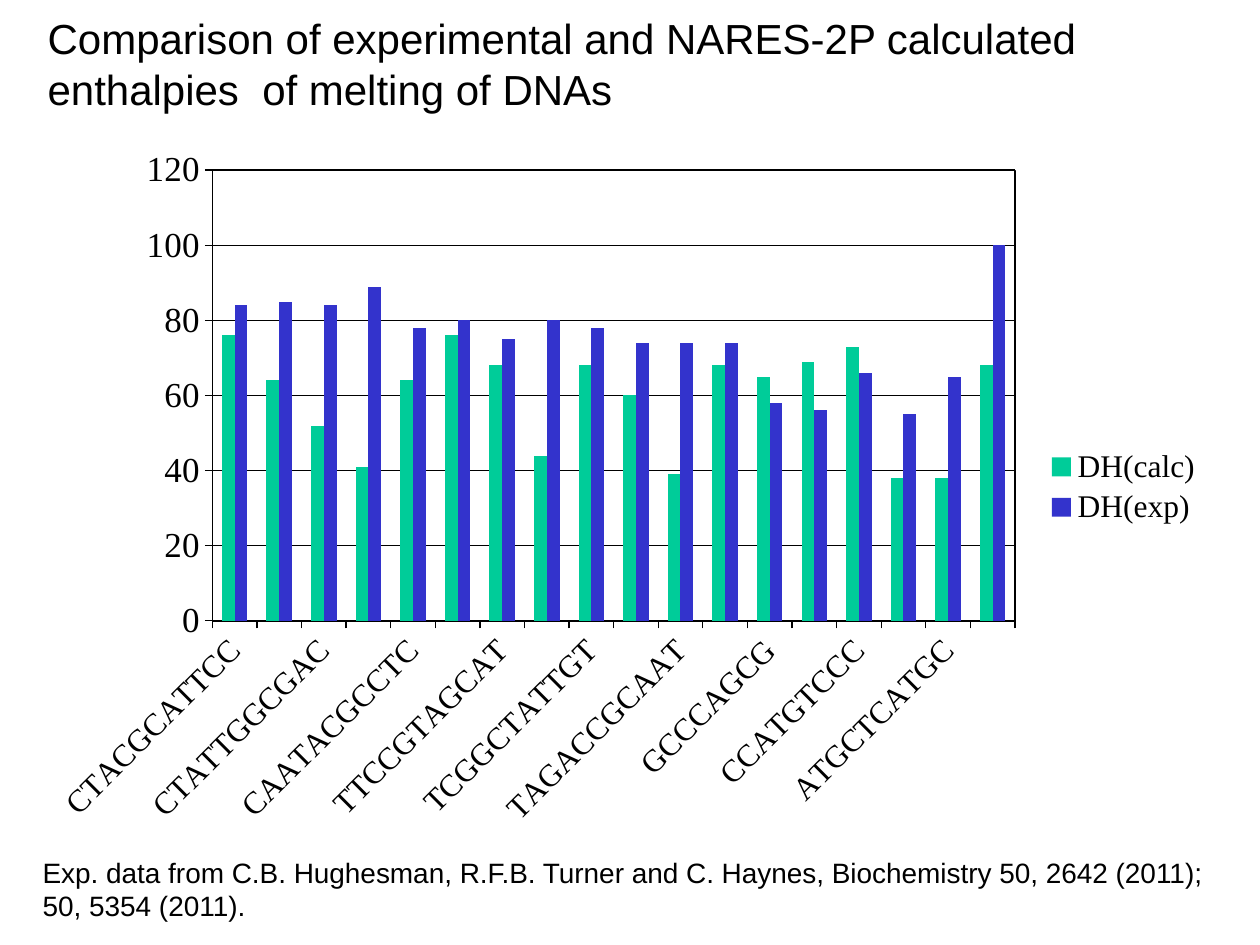
import pptx
import pptx.chart.data
import pptx.dml.color
import pptx.enum.chart
import pptx.enum.text
import pptx.oxml
import pptx.oxml.ns
import pptx.util

Cm = pptx.util.Cm
INK = "000000"
SEQUENCES = [
    "CTACGCATTCC", "CTAACGGATGC", "CTATTGGCGAC", "CGTATTCAGGC", "CAATACGCCTC", "TTCATAGCCGT",
    "TTCCGTAGCAT", "TGCGGATAAGT", "TCGGCTATTGT", "TACTCCGCATT", "TAGACCGCAAT", "TATCGTTGCCT",
    "GCCCAGCG", "AGACCTAGT", "CCATGTCCC", "TGCACGCTA", "ATGCTCATGC", "CTCGGGAACGCC",
]
ENTHALPIES = {
    "DH(calc)": ("00CC99", [76, 64, 52, 41, 64, 76, 68, 44, 68, 60, 39, 68, 65, 69, 73, 38, 38, 68]),
    "DH(exp)": ("3333CC", [84, 85, 84, 89, 78, 80, 75, 80, 78, 74, 74, 74, 58, 56, 66, 55, 65, 100]),
}
PLOT_LAYOUT = {"layoutTarget": "inner", "xMode": "edge", "yMode": "edge",
               "x": 0.15, "y": 0.05, "w": 0.68, "h": 0.64}


def colour(hex_string):
    return pptx.dml.color.RGBColor.from_string(hex_string)


def apply(target, values):
    for name, value in values.items():
        setattr(target, name, value)


def chart_xml(body):
    tag, rest = body[1:].split(">", 1)
    return pptx.oxml.parse_xml(f"<{tag} {pptx.oxml.ns.nsdecls('c', 'a')}>{rest}")


class SlideBuilder:
    """Adds styled text and column charts to the current slide."""

    def __init__(self, slide, text_font, chart_font):
        self.slide = slide
        self.text_font = text_font
        self.chart_font = chart_font

    def style_font(self, font, name, size):
        apply(font, {"name": name, "size": pptx.util.Pt(size)})
        font.color.rgb = colour(INK)

    def style_line(self, line):
        line.color.rgb = colour(INK)
        line.width = pptx.util.Pt(0.75)

    def text(self, wording, box, size):
        frame = self.slide.shapes.add_textbox(*map(Cm, box)).text_frame
        apply(frame, {"word_wrap": True, "auto_size": pptx.enum.text.MSO_AUTO_SIZE.SHAPE_TO_FIT_TEXT})
        paragraph = frame.paragraphs[0]
        paragraph.text = wording
        self.style_font(paragraph.runs[0].font, self.text_font, size)

    def axis(self, axis, size):
        axis.major_tick_mark = pptx.enum.chart.XL_TICK_MARK.OUTSIDE
        self.style_font(axis.tick_labels.font, self.chart_font, size)
        self.style_line(axis.format.line)

    def column_chart(self, categories, series_table, box):
        data = pptx.chart.data.CategoryChartData()
        data.categories = categories
        for name, (_, values) in series_table.items():
            data.add_series(name, values)
        kind = pptx.enum.chart.XL_CHART_TYPE.COLUMN_CLUSTERED
        chart = self.slide.shapes.add_chart(kind, *map(Cm, box), data).chart
        apply(chart, {"has_title": False, "has_legend": True})
        self.style_font(chart.font, self.chart_font, 10)
        apply(chart.legend, {"position": pptx.enum.chart.XL_LEGEND_POSITION.RIGHT,
                             "include_in_layout": False})
        self.style_font(chart.legend.font, self.chart_font, 18)
        plot = chart.plots[0]
        apply(plot, {"gap_width": 150, "overlap": 0, "vary_by_categories": False})
        for series, (fill, _) in zip(plot.series, series_table.values()):
            series.format.fill.solid()
            series.format.fill.fore_color.rgb = colour(fill)
        self.axis(chart.category_axis, 18)
        self.axis(chart.value_axis, 20)
        apply(chart.value_axis, {"minimum_scale": 0, "maximum_scale": 120, "major_unit": 20})
        self.style_line(chart.value_axis.major_gridlines.format.line)
        self.slant_labels(chart)
        self.frame_plot(chart)

    def slant_labels(self, chart):
        category_axis = chart.element.xpath(".//c:catAx")[0]
        category_axis.xpath("./c:txPr/a:bodyPr")[0].set("rot", "-2700000")
        category_axis.xpath("./c:lblOffset")[0].addnext(chart_xml('<c:tickLblSkip>2</c:tickLblSkip>'))
        skip = category_axis.xpath("./c:tickLblSkip")[0]
        skip.text = None
        skip.set("val", "2")

    def frame_plot(self, chart):
        plot_area = chart.element.xpath(".//c:plotArea")[0]
        for layout in plot_area.xpath("./c:layout"):
            plot_area.remove(layout)
        settings = "".join(f'<c:{name} val="{value}"/>' for name, value in PLOT_LAYOUT.items())
        plot_area.insert(0, chart_xml(f"<c:layout><c:manualLayout>{settings}</c:manualLayout></c:layout>"))
        plot_area.append(chart_xml(
            '<c:spPr><a:noFill/><a:ln w="9525"><a:solidFill>'
            f'<a:srgbClr val="{INK}"/></a:solidFill></a:ln></c:spPr>'))


def main():
    presentation = pptx.Presentation()
    apply(presentation, {"slide_width": Cm(25.4), "slide_height": Cm(19.05)})
    slide = presentation.slides.add_slide(presentation.slide_layouts[6])
    builder = SlideBuilder(slide, "Arial", "Times New Roman")
    builder.column_chart(SEQUENCES, ENTHALPIES, (0.71, 2.72, 23.8, 14.2))
    builder.text("Comparison of experimental and NARES-2P calculated enthalpies  of melting of DNAs",
                 (0.71, 0.13, 24.2, 2.31), 24)
    builder.text("Exp. data from C.B. Hughesman, R.F.B. Turner and C. Haynes, "
                 "Biochemistry 50, 2642 (2011); 50, 5354 (2011).",
                 (0.61, 17.12, 24.69, 1.63), 16)
    presentation.save("out.pptx")


if __name__ == "__main__":
    main()
